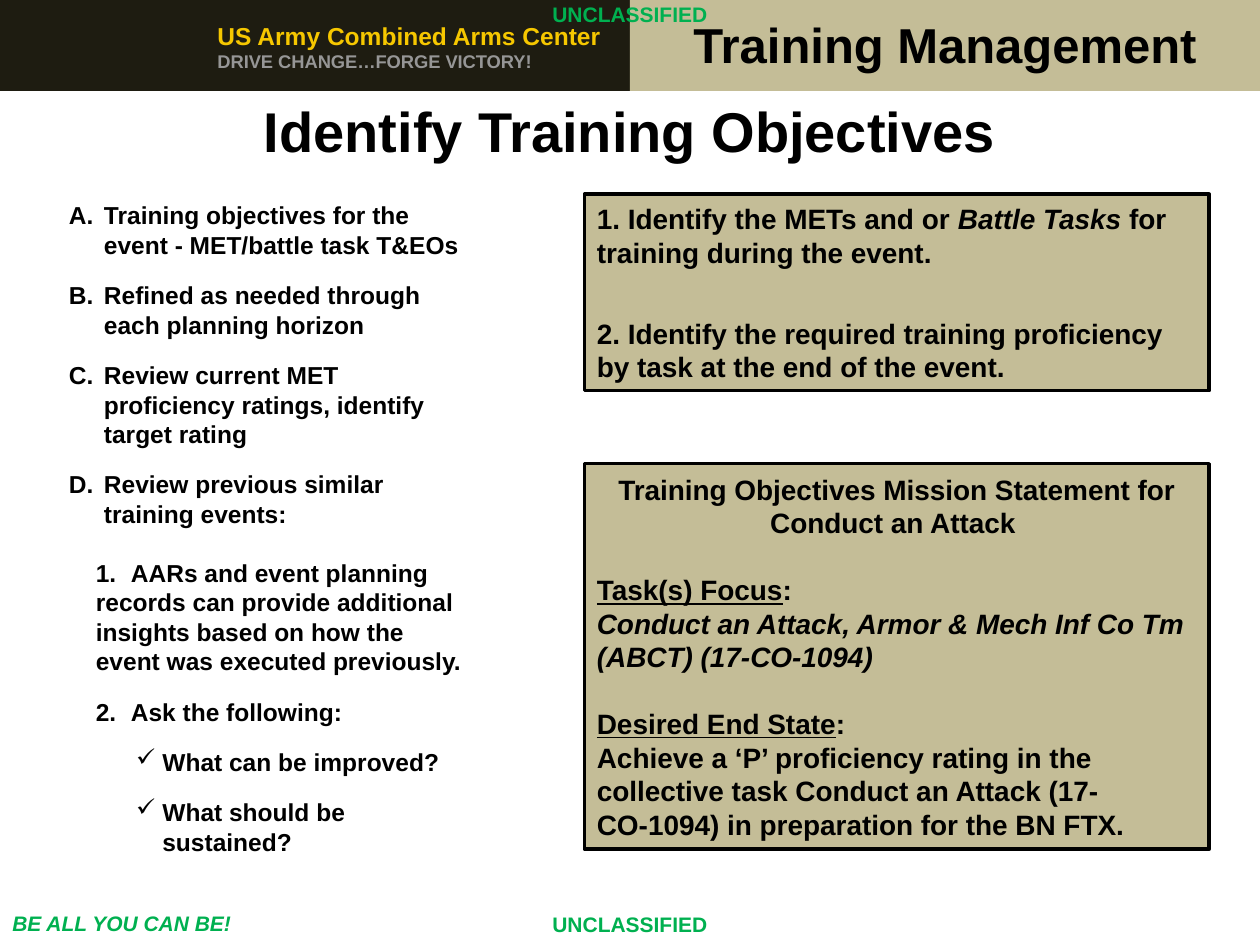
import pptx
import pptx.util
import pptx.dml.color
import pptx.enum.shapes
import pptx.enum.text
import pptx.oxml.ns
import lxml.etree

Pt = pptx.util.Pt
ALIGN = pptx.enum.text.PP_ALIGN
ANCHOR = pptx.enum.text.MSO_ANCHOR

FONT = "Arial"
BLACK, WHITE, TAN, DARK = "000000", "FFFFFF", "C4BD97", "1E1C11"
GREEN, GOLD, GRAY = "00B050", "F6C700", "969696"
SLIDE_W, SLIDE_H, HEADER_H = 720, 540, 52
INSETS = (7.2, 3.6)

TITLE = "Identify Training Objectives"

LETTER = {"left": 35, "indent": -20, "level": 1, "number": ("alphaUcPeriod", 1)}
DIGIT = {"left": 50.4, "indent": -20, "level": 2}
CHECK = {"left": 68.4, "indent": -15, "level": 4, "char": "✓", "before": 12}

OUTLINE = [
    ("Training objectives for the event - MET/battle task T&EOs", LETTER),
    ("Refined as needed through each planning horizon", {**LETTER, "before": 12}),
    ("Review current MET proficiency ratings, identify target rating",
     {**LETTER, "before": 12}),
    ("Review previous similar training events:", {**LETTER, "before": 12}),
    ("AARs and event planning",
     {**DIGIT, "before": 17, "number": ("arabicPeriod", 1)}),
    ("records can provide additional insights based on how the event was "
     "executed previously.", {"left": 30.4, "level": 2}),
    ("Ask the following:",
     {**DIGIT, "before": 12, "number": ("arabicPeriod", 2)}),
    ("What can be improved?", CHECK),
    ("What should be sustained?", CHECK),
]

STEPS = [
    ([("1. Identify the METs and or ", ""), ("Battle Tasks ", "i"),
      ("for training during the event.", "")], {}),
    ("2. Identify the required training proficiency by task at the end of "
     "the event.", {"before": 27}),
]

MISSION = [
    ("Training Objectives Mission Statement for Conduct an Attack ",
     {"align": ALIGN.CENTER}),
    ([("Task(s) Focus", "u"), (":", "")], {"before": 19}),
    ([("Conduct an Attack, Armor & Mech Inf Co Tm (ABCT) (17-CO-1094)", "i")], {}),
    ([("Desired End State", "u"), (":", "")], {"before": 19}),
    ("Achieve a ‘P’ proficiency rating in the collective task Conduct an "
     "Attack (17-CO-1094) in preparation for the BN FTX.", {}),
]

CENTERED = {"align": ALIGN.CENTER}
CENTER_NAME = [
    ("US Army Combined Arms Center", {"left": 40, "color": GOLD}),
    ("DRIVE CHANGE…FORGE VICTORY!", {"left": 40, "color": GRAY, "size": 10.5}),
]
MOTTO = [([("BE ALL YOU CAN BE!", "i")], {})]
MARKING = [("UNCLASSIFIED", CENTERED)]
COURSE = [("Training Management", CENTERED)]


def rgb(value):
    return pptx.dml.color.RGBColor.from_string(value)


def add_bullet(p, opts):
    pPr = p._p.get_or_add_pPr()
    qn = pptx.oxml.ns.qn
    if "number" in opts:
        kind, start = opts["number"]
        el = lxml.etree.SubElement(pPr, qn("a:buAutoNum"), type=kind)
        if start > 1:
            el.set("startAt", str(start))
    elif "char" in opts:
        lxml.etree.SubElement(pPr, qn("a:buChar"), char=opts["char"])
    else:
        lxml.etree.SubElement(pPr, qn("a:buNone"))
    pPr.set("marL", str(Pt(opts.get("left", 0))))
    pPr.set("indent", str(Pt(opts.get("indent", 0))))


def write(s, paragraphs, size, color=BLACK, anchor=ANCHOR.MIDDLE, insets=INSETS):
    tf = s.text_frame
    tf.word_wrap = True
    tf.auto_size = pptx.enum.text.MSO_AUTO_SIZE.NONE
    tf.vertical_anchor = anchor
    tf.margin_left = tf.margin_right = Pt(insets[0])
    tf.margin_top = tf.margin_bottom = Pt(insets[1])
    for i, (content, opts) in enumerate(paragraphs):
        p = tf.add_paragraph() if i else tf.paragraphs[0]
        p.alignment = opts.get("align", ALIGN.LEFT)
        p.level = opts.get("level", 0)
        p.space_before = Pt(opts.get("before", 0))
        add_bullet(p, opts)
        runs = [(content, "")] if isinstance(content, str) else content
        for text, style in runs:
            r = p.add_run()
            r.text = text
            r.font.name = FONT
            r.font.size = Pt(opts.get("size", size))
            r.font.bold = True
            r.font.italic = style == "i"
            r.font.underline = style == "u"
            r.font.color.rgb = rgb(opts.get("color", color))


def add_rect(slide, box, fill, line=None):
    s = slide.shapes.add_shape(
        pptx.enum.shapes.MSO_SHAPE.RECTANGLE, *map(Pt, box))
    s.shadow.inherit = False
    s.fill.solid()
    s.fill.fore_color.rgb = rgb(fill)
    if line:
        s.line.color.rgb = rgb(line)
        s.line.width = Pt(2)
    else:
        s.line.fill.background()
    return s


def add_text(slide, box, paragraphs, size, **kwargs):
    write(slide.shapes.add_textbox(*map(Pt, box)), paragraphs, size, **kwargs)


def main():
    prs = pptx.Presentation()
    prs.slide_width, prs.slide_height = Pt(SLIDE_W), Pt(SLIDE_H)
    slide = prs.slides.add_slide(prs.slide_layouts[5])
    slide.background.fill.solid()
    slide.background.fill.fore_color.rgb = rgb(WHITE)

    half = SLIDE_W / 2
    for left, fill in ((0, DARK), (half, TAN)):
        add_rect(slide, (left, 0, half, HEADER_H), fill)
    add_text(slide, (0, 517, 168.5, 21.6), MOTTO, 12, color=GREEN,
             anchor=ANCHOR.TOP)
    add_text(slide, (81.4, 1.4, 271.4, 50.4), CENTER_NAME, 14, insets=(2.9, 1.4))
    for top in (0.7, 520.6):
        add_text(slide, (306, top, 108, 14.4), MARKING, 12, color=GREEN)
    add_text(slide, (half, 0, half, 50.4), COURSE, 28, insets=(1.4, 1.4))

    title = slide.shapes.title
    title.left, title.top, title.width, title.height = map(
        Pt, (0, 52.6, SLIDE_W, 43.2))
    write(title, [(TITLE, CENTERED)], 32, insets=(4.3, 2.2))

    add_text(slide, (17.3, 111, 258.5, 395.3), OUTLINE, 14, anchor=ANCHOR.TOP)
    for top, height, paragraphs in ((265, 220.3, MISSION), (111, 112.3, STEPS)):
        panel = add_rect(slide, (334, top, 357, height), TAN, BLACK)
        write(panel, paragraphs, 16)

    prs.save("out.pptx")


if __name__ == "__main__":
    main()
